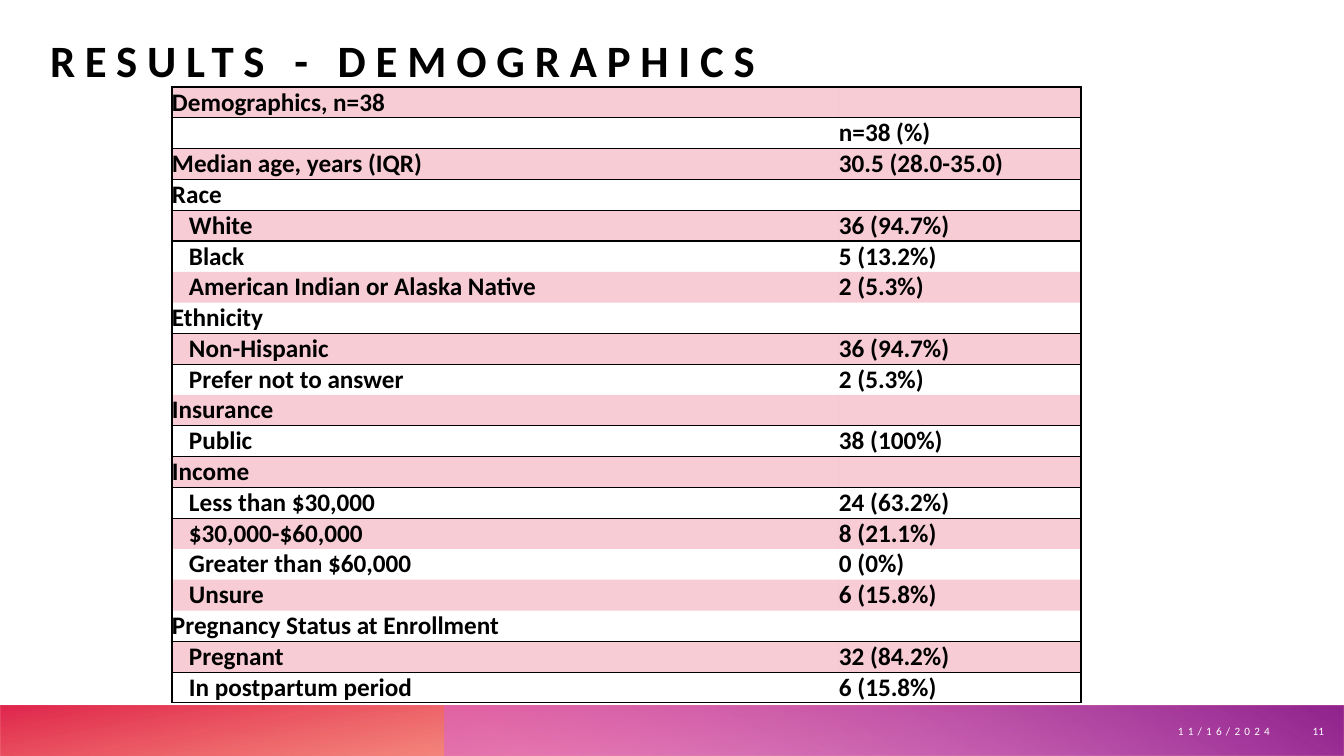
from dataclasses import dataclass

from lxml.etree import SubElement
from pptx import Presentation
from pptx.dml.color import RGBColor
from pptx.enum.shapes import MSO_SHAPE
from pptx.enum.text import MSO_ANCHOR, MSO_AUTO_SIZE, PP_ALIGN
from pptx.oxml import parse_xml
from pptx.oxml.ns import nsdecls, qn
from pptx.util import Emu, Pt

TITLE = "RESULTS - DEMOGRAPHICS"
DATE = "11/16/2024"
PAGE = "11"
# fmt: off
DEMOGRAPHICS = [
    ("Demographics, n=38", "", 0),
    ("", "n=38 (%)", 0),
    ("Median age, years (IQR)", "30.5 (28.0-35.0)", 0),
    ("Race", "", 0),
    ("White", "36 (94.7%)", 1),
    ("Black", "5 (13.2%)", 1),
    ("American Indian or Alaska Native", "2 (5.3%)", 1),
    ("Ethnicity", "", 0),
    ("Non-Hispanic", "36 (94.7%)", 1),
    ("Prefer not to answer", "2 (5.3%)", 1),
    ("Insurance", "", 0),
    ("Public", "38 (100%)", 1),
    ("Income", "", 0),
    ("Less than $30,000", "24 (63.2%)", 1),
    ("$30,000-$60,000", "8 (21.1%)", 1),
    ("Greater than $60,000", "0 (0%)", 1),
    ("Unsure", "6 (15.8%)", 1),
    ("Pregnancy Status at Enrollment", "", 0),
    ("Pregnant", "32 (84.2%)", 1),
    ("In postpartum period", "6 (15.8%)", 1),
]
# fmt: on
UNRULED_BELOW = {
    "Black", "American Indian or Alaska Native", "Prefer not to answer",
    "$30,000-$60,000", "Greater than $60,000", "Unsure",
}


@dataclass(frozen=True)
class Theme:
    font: str = "Calibri"
    ink: str = "000000"
    footer_ink: str = "FFFFFF"
    band: str = "DA002F"
    band_alpha: int = 20
    warm: tuple = ((14, "FE4A00", 28), (100, "DA002F", 85))
    violet: tuple = ((9, "D861D4", 55), (99, "92248E", 100))
    title_size: int = 32
    table_size: int = 18
    footer_size: int = 8
    rule_width: int = 1


THEME = Theme()
NO_GRID_STYLE = "{2D5ABB26-0587-4C30-8999-92F81FD0307C}"
SLIDE_W, SLIDE_H = 1344, 756
BAR_TOP, BAR_H = 706, 50
TABLE_LEFT, TABLE_TOP, ROW_H = 172, 87, 30
COLUMNS = (667, 242)
INDENT = 17


def px(n):
    return Emu(round(n * 914400 / 100.8))


def style(paragraph, size, color, bold=False):
    font = paragraph.font
    font.name, font.size, font.bold = THEME.font, Pt(size), bold
    font.color.rgb = RGBColor.from_string(color)


def track(paragraph, points):
    for run in paragraph.runs:
        run.font._element.set("spc", str(points * 100))


def set_alpha(fill_xml, percent):
    SubElement(fill_xml.find(".//" + qn("a:srgbClr")), qn("a:alpha")).set("val", str(percent * 1000))


def add_bar(slide, left, stops, angle, rotation=0):
    bar = slide.shapes.add_shape(
        MSO_SHAPE.RECTANGLE, px(left), px(BAR_TOP), px(SLIDE_W - left), px(BAR_H))
    bar.shadow.inherit = False
    bar.line.fill.background()
    bar.rotation = rotation
    bar._element.spPr.find(qn("a:xfrm")).set("flipH", "1")
    bar.fill.gradient()
    bar.fill.gradient_angle = 360 - angle
    stop_xml = bar._element.spPr.findall(".//" + qn("a:gs"))
    for stop, xml, (position, color, alpha) in zip(bar.fill.gradient_stops, stop_xml, stops):
        stop.position = position / 100
        stop.color.rgb = RGBColor.from_string(color)
        for old in list(xml[0]):
            xml[0].remove(old)
        set_alpha(xml, alpha)


def add_title(slide):
    title = slide.shapes.title
    title.left, title.top, title.width, title.height = px(50), px(0), px(1129), px(87)
    frame = title.text_frame
    frame.text = TITLE
    frame.auto_size = MSO_AUTO_SIZE.NONE
    frame.vertical_anchor = MSO_ANCHOR.BOTTOM
    frame.margin_left = frame.margin_right = frame.margin_top = frame.margin_bottom = 0
    heading = frame.paragraphs[0]
    heading.alignment = PP_ALIGN.LEFT
    style(heading, THEME.title_size, THEME.ink, True)
    track(heading, 7)


def add_footer(slide, text, left, width, spacing):
    frame = slide.shapes.add_textbox(px(left), px(BAR_TOP), px(width), px(BAR_H)).text_frame
    frame.word_wrap = True
    frame.vertical_anchor = MSO_ANCHOR.MIDDLE
    frame.text = text
    line = frame.paragraphs[0]
    line.alignment = PP_ALIGN.RIGHT
    style(line, THEME.footer_size, THEME.footer_ink)
    track(line, spacing)


def set_borders(cell, ruled):
    properties = cell._tc.get_or_add_tcPr()
    for order, side in enumerate("LRTB"):
        paint = (f'<a:solidFill><a:srgbClr val="{THEME.ink}"/></a:solidFill>'
                 if side in ruled else "<a:noFill/>")
        properties.insert(order, parse_xml(
            f'<a:ln{side} {nsdecls("a")} w="{Pt(THEME.rule_width)}">{paint}</a:ln{side}>'))


def fill_cell(cell, text, indent, banded):
    cell.margin_left = px(INDENT * indent)
    cell.margin_right = cell.margin_top = cell.margin_bottom = 0
    cell.vertical_anchor = MSO_ANCHOR.MIDDLE
    cell.text = text
    style(cell.text_frame.paragraphs[0], THEME.table_size, THEME.ink, True)
    if banded:
        cell.fill.solid()
        cell.fill.fore_color.rgb = RGBColor.from_string(THEME.band)
        set_alpha(cell._tc.tcPr, THEME.band_alpha)
    else:
        cell.fill.background()


def add_demographics(slide):
    table = slide.shapes.add_table(
        len(DEMOGRAPHICS), len(COLUMNS), px(TABLE_LEFT), px(TABLE_TOP),
        px(sum(COLUMNS)), px(ROW_H * len(DEMOGRAPHICS))).table
    table._tbl.tblPr.find(qn("a:tableStyleId")).text = NO_GRID_STYLE
    for column, width in zip(table.columns, COLUMNS):
        column.width = px(width)
    ruled_above = True
    for index, (label, value, indent) in enumerate(DEMOGRAPHICS):
        table.rows[index].height = px(ROW_H)
        ruled_below = label not in UNRULED_BELOW
        rules = "T" * ruled_above + "B" * ruled_below
        for column, (text, inset, edge) in enumerate(((label, indent, "L"), (value, 0, "R"))):
            cell = table.cell(index, column)
            fill_cell(cell, text, inset, index % 2 == 0)
            set_borders(cell, rules + edge)
        ruled_above = ruled_below


def main():
    deck = Presentation()
    deck.slide_width, deck.slide_height = px(SLIDE_W), px(SLIDE_H)
    slide = deck.slides.add_slide(deck.slide_layouts[5])
    add_bar(slide, 0, THEME.warm, 100, rotation=180)
    add_bar(slide, 445, THEME.violet, 240)
    add_title(slide)
    add_demographics(slide)
    add_footer(slide, DATE, 872, 408, 3)
    add_footer(slide, PAGE, 1286, 48, 0)
    deck.save("out.pptx")


if __name__ == "__main__":
    main()
